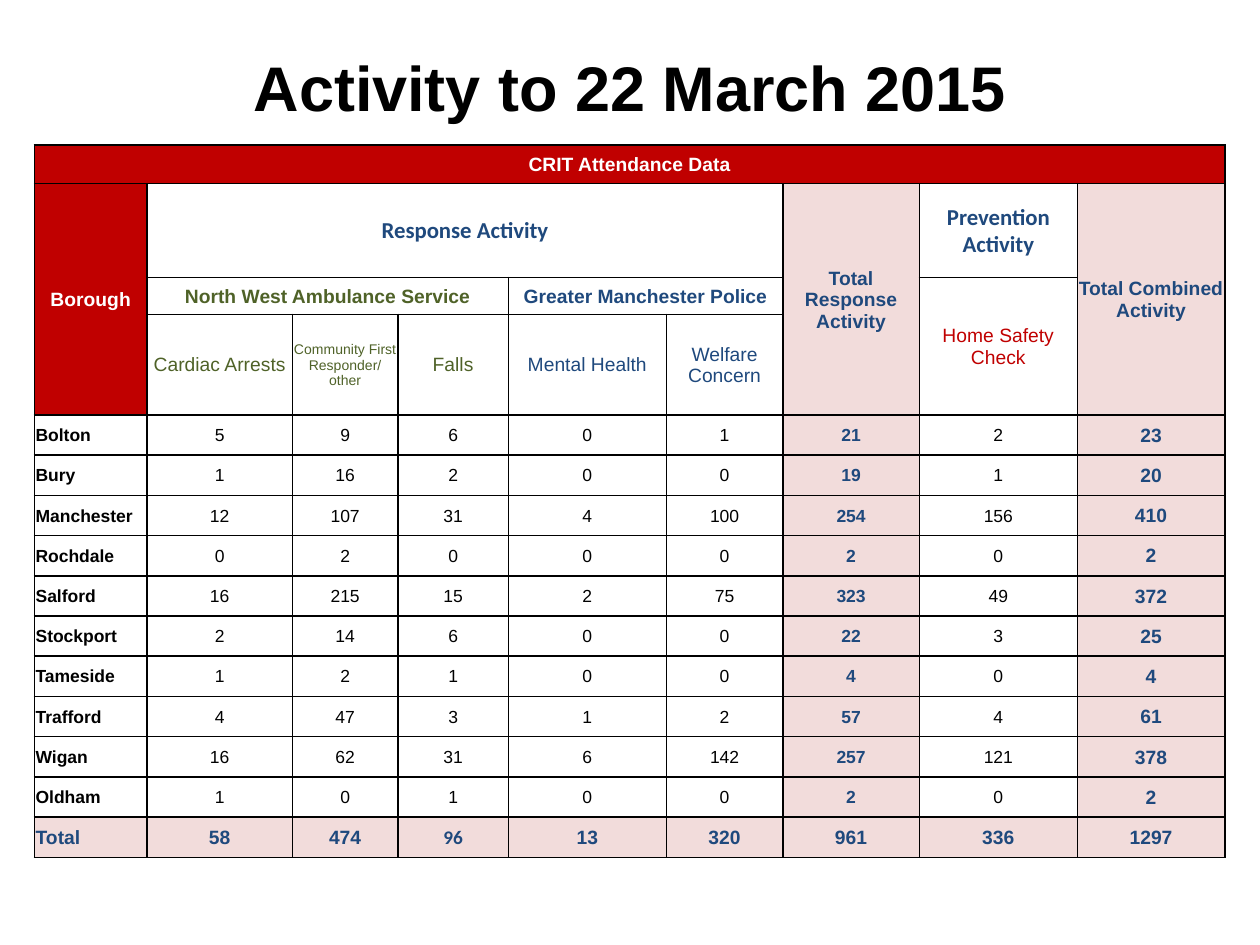
from lxml.etree import SubElement
from pptx import Presentation
from pptx.dml.color import RGBColor
from pptx.enum.text import MSO_ANCHOR, PP_ALIGN
from pptx.oxml.ns import qn
from pptx.util import Pt

BLACK, WHITE, RED, PINK = "000000", "FFFFFF", "C00000", "F2DCDB"
NAVY, GREEN = "1F497D", "4F6228"

TITLE = "Activity to 22 March 2015"
LEFT, TOP = 19.7, 82.9
COL_WIDTHS = [64.3, 83.1, 60.3, 63.1, 90.3, 66.6, 78, 90.3, 84.3]
HEADER_HEIGHTS = [22.1, 53.5, 21.1, 57.5]
DATA_HEIGHT = 23

# row, column, row span, column span, text, size, font, colour, bold, fill
HEADERS = [
    (0, 0, 1, 9, "CRIT Attendance Data", 11, "Arial", WHITE, True, RED),
    (1, 0, 3, 1, "Borough", 11, "Arial", WHITE, True, RED),
    (1, 1, 1, 5, "Response Activity", 13, "Calibri", NAVY, True, None),
    (1, 6, 3, 1, "Total Response Activity", 11, "Arial", NAVY, True, PINK),
    (1, 7, 1, 1, "Prevention Activity", 13, "Calibri", NAVY, True, None),
    (1, 8, 3, 1, "Total Combined Activity", 11, "Arial", NAVY, True, PINK),
    (2, 1, 1, 3, "North West Ambulance Service", 11, "Arial", GREEN, True, None),
    (2, 4, 1, 2, "Greater Manchester Police", 11, "Arial", NAVY, True, None),
    (2, 7, 2, 1, "Home Safety Check", 11, "Arial", RED, False, None),
    (3, 1, 1, 1, "Cardiac Arrests", 11, "Arial", GREEN, False, None),
    (3, 2, 1, 1, "Community First Responder/\nother", 8, "Arial", GREEN, False, None),
    (3, 3, 1, 1, "Falls", 11, "Arial", GREEN, False, None),
    (3, 4, 1, 1, "Mental Health", 11, "Arial", NAVY, False, None),
    (3, 5, 1, 1, "Welfare Concern", 11, "Arial", NAVY, False, None),
]
BOROUGHS = [
    ("Bolton", 5, 9, 6, 0, 1, 21, 2, 23),
    ("Bury", 1, 16, 2, 0, 0, 19, 1, 20),
    ("Manchester", 12, 107, 31, 4, 100, 254, 156, 410),
    ("Rochdale", 0, 2, 0, 0, 0, 2, 0, 2),
    ("Salford", 16, 215, 15, 2, 75, 323, 49, 372),
    ("Stockport", 2, 14, 6, 0, 0, 22, 3, 25),
    ("Tameside", 1, 2, 1, 0, 0, 4, 0, 4),
    ("Trafford", 4, 47, 3, 1, 2, 57, 4, 61),
    ("Wigan", 16, 62, 31, 6, 142, 257, 121, 378),
    ("Oldham", 1, 0, 1, 0, 0, 2, 0, 2),
]
TOTALS = ("Total", 58, 474, 96, 13, 320, 961, 336, 1297)
FALLS_COL, RESPONSE_COL, COMBINED_COL = 3, 6, 8


def rgb(value):
    """Turn a hex string into a colour."""
    return RGBColor.from_string(value)


def write(tf, text, size, font, color, bold, align=PP_ALIGN.CENTER):
    """Write each line of text as one styled paragraph."""
    for i, line in enumerate(text.split("\n")):
        p = tf.add_paragraph() if i else tf.paragraphs[0]
        p.alignment = align
        r = p.add_run()
        r.text = line
        r.font.size, r.font.name, r.font.bold = Pt(size), font, bold
        r.font.color.rgb = rgb(color)


def style_cell(cell):
    """Give a cell thin black borders, tight margins and no fill."""
    tc_pr = cell._tc.get_or_add_tcPr()
    for side in ("a:lnL", "a:lnR", "a:lnT", "a:lnB"):
        ln = SubElement(tc_pr, qn(side), w=str(Pt(1)))
        SubElement(SubElement(ln, qn("a:solidFill")), qn("a:srgbClr"), val=BLACK)
    cell.margin_left = cell.margin_right = cell.margin_top = Pt(0.7)
    cell.margin_bottom = 0
    cell.vertical_anchor = MSO_ANCHOR.MIDDLE
    cell.fill.background()


def paint(cell, fill):
    """Fill a cell with a solid colour."""
    cell.fill.solid()
    cell.fill.fore_color.rgb = rgb(fill)


def add_headers(table):
    """Merge, fill and label the heading cells."""
    for row, col, rows, cols, text, size, font, color, bold, fill in HEADERS:
        cell = table.cell(row, col)
        if rows * cols > 1:
            cell.merge(table.cell(row + rows - 1, col + cols - 1))
        if fill:
            paint(cell, fill)
        write(cell.text_frame, text, size, font, color, bold)


def add_figures(table):
    """Write the borough rows and the total row."""
    for row, values in enumerate(BOROUGHS + [TOTALS], len(HEADER_HEIGHTS)):
        total = values is TOTALS
        for col, value in enumerate(values):
            cell = table.cell(row, col)
            summed = total or col in (RESPONSE_COL, COMBINED_COL)
            if summed:
                paint(cell, PINK)
            size = 11 if total or col == COMBINED_COL else 10
            font = "Calibri" if total and col == FALLS_COL else "Arial"
            align = PP_ALIGN.CENTER if col else PP_ALIGN.LEFT
            write(cell.text_frame, str(value), size, font,
                  NAVY if summed else BLACK, summed or col == 0, align)


def main():
    """Build the activity slide."""
    prs = Presentation()
    prs.slide_width, prs.slide_height = Pt(720), Pt(540)
    s = prs.slides.add_slide(prs.slide_layouts[6])

    tf = s.shapes.add_textbox(Pt(36), Pt(21.6), Pt(648), Pt(55.4)).text_frame
    tf.word_wrap = True
    tf.vertical_anchor = MSO_ANCHOR.MIDDLE
    write(tf, TITLE, 36, "Arial", BLACK, True)

    heights = HEADER_HEIGHTS + [DATA_HEIGHT] * (len(BOROUGHS) + 1)
    table = s.shapes.add_table(len(heights), len(COL_WIDTHS), Pt(LEFT), Pt(TOP),
                               Pt(sum(COL_WIDTHS)), Pt(sum(heights))).table
    table.first_row = table.horz_banding = False
    for column, width in zip(table.columns, COL_WIDTHS):
        column.width = Pt(width)
    for row, height in zip(table.rows, heights):
        row.height = Pt(height)
    for cell in table.iter_cells():
        style_cell(cell)
    add_headers(table)
    add_figures(table)
    prs.save("out.pptx")


if __name__ == "__main__":
    main()
